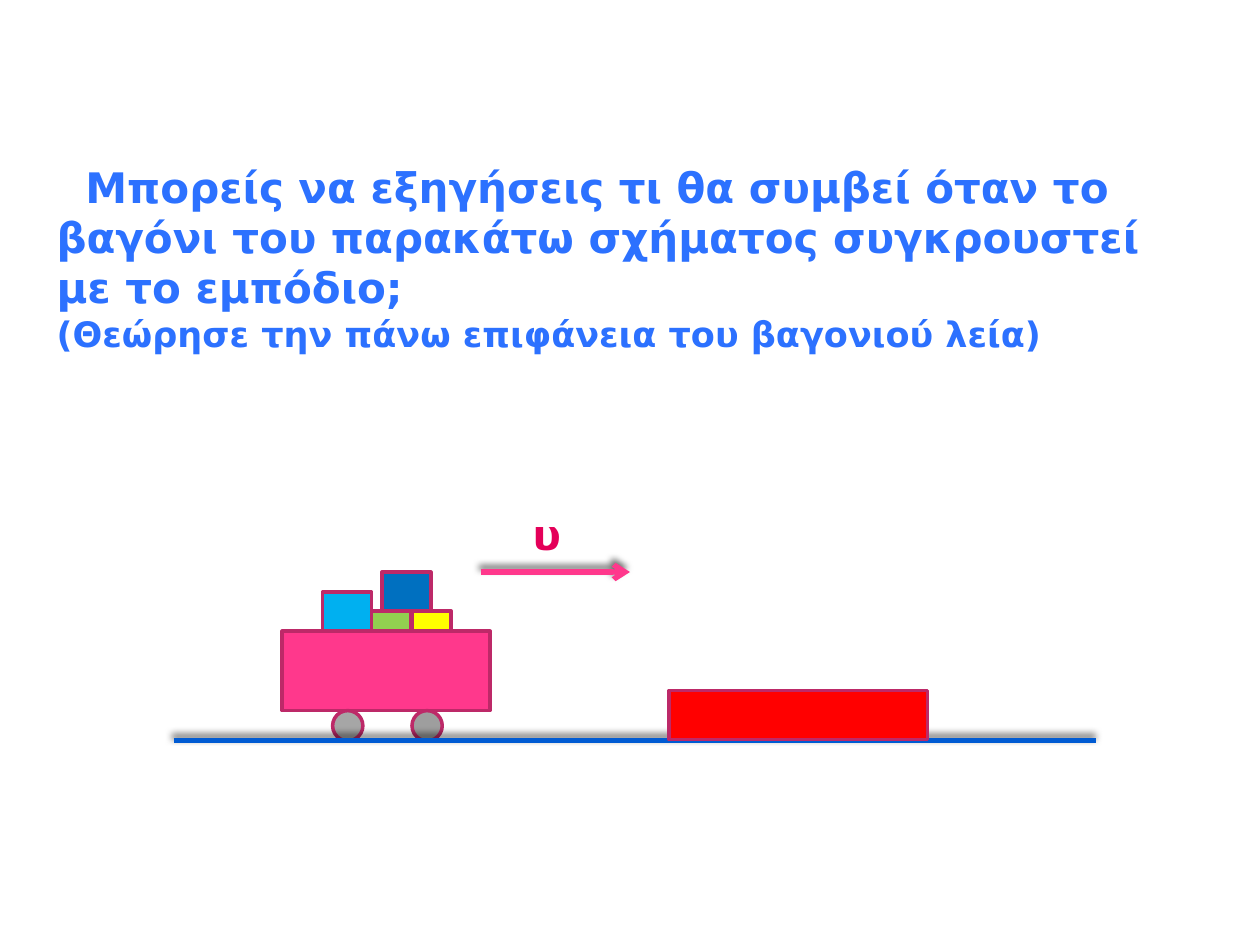
from lxml.etree import SubElement
from pptx import Presentation
from pptx.dml.color import RGBColor
from pptx.enum.shapes import MSO_CONNECTOR as Connector, MSO_SHAPE as Shape
from pptx.enum.text import MSO_AUTO_SIZE as AutoSize
from pptx.oxml.ns import qn
from pptx.util import Inches, Pt

THEME = {
    "font": "DejaVu Sans",
    "outline": "BD2968",
    "outline_width": 2,
    "line_width": 3,
    "ground": "005BD3",
    "velocity": "FF388C",
    "question": {"size": Pt(24), "color": "2C71FF"},
    "hint": {"size": Pt(20), "color": "2C71FF"},
    "symbol": {"size": Pt(24), "color": "E40059"},
    "shadow": {"color": "000000", "alpha": 60, "blur": 4, "distance": 3, "angle": 245},
}

WHEEL = 0.24
CRATE_W, CRATE_H = 0.39, 0.31
SLAB_W, SLAB_H = 0.31, 0.16
GROUND_Y = 5.88
WAGON_TOP = 5.01
SLAB_TOP = WAGON_TOP - SLAB_H

WAGON = [
    (Shape.RECTANGLE, 2.24, WAGON_TOP, 1.65, 0.63, "FF388C"),
    (Shape.OVAL, 2.64, GROUND_Y - WHEEL, WHEEL, WHEEL, "A6A6A6"),
    (Shape.OVAL, 3.27, GROUND_Y - WHEEL, WHEEL, WHEEL, "9E9E9E"),
]
CARGO = [
    (Shape.RECTANGLE, 2.95, SLAB_TOP, SLAB_W, SLAB_H, "92D050"),
    (Shape.RECTANGLE, 3.27, SLAB_TOP, SLAB_W, SLAB_H, "FFFF00"),
    (Shape.RECTANGLE, 2.56, WAGON_TOP - CRATE_H, CRATE_W, CRATE_H, "00B0F0"),
    (Shape.RECTANGLE, 3.03, SLAB_TOP - CRATE_H, CRATE_W, CRATE_H, "0070C0"),
]
OBSTACLE = [(Shape.RECTANGLE, 5.31, 5.48, 2.05, 0.39, "FF0000")]

QUESTION = [
    ("Μπορείς να εξηγήσεις τι θα συμβεί όταν το βαγόνι του παρακάτω σχήματος "
     "συγκρουστεί με το εμπόδιο;", "question", 0.23),
    ("(Θεώρησε την πάνω επιφάνεια του βαγονιού λεία)", "hint", 0),
]
SYMBOL = [("υ", "symbol", 0)]


def rgb(code):
    return RGBColor.from_string(code)


def draw_bodies(slide, bodies):
    for kind, left, top, width, height, fill in bodies:
        body = slide.shapes.add_shape(kind, *map(Inches, (left, top, width, height)))
        body.shadow.inherit = False
        body.fill.solid()
        body.fill.fore_color.rgb = rgb(fill)
        body.line.color.rgb = rgb(THEME["outline"])
        body.line.width = Pt(THEME["outline_width"])


def draw_line(slide, left, right, y, color, arrow=False):
    stroke = slide.shapes.add_connector(
        Connector.STRAIGHT, *map(Inches, (left, y, right, y)))
    stroke.line.color.rgb = rgb(color)
    stroke.line.width = Pt(THEME["line_width"])
    if arrow:
        SubElement(stroke.line._get_or_add_ln(), qn("a:tailEnd"), type="arrow")
    shadow = THEME["shadow"]
    effects = SubElement(stroke._element.spPr, qn("a:effectLst"))
    outer = SubElement(
        effects, qn("a:outerShdw"),
        blurRad=str(Pt(shadow["blur"])), dist=str(Pt(shadow["distance"])),
        dir=str(shadow["angle"] * 60000), rotWithShape="0")
    tint = SubElement(outer, qn("a:srgbClr"), val=shadow["color"])
    SubElement(tint, qn("a:alpha"), val=str(shadow["alpha"] * 1000))


def write_text(slide, place, paragraphs, wrap):
    frame = slide.shapes.add_textbox(*map(Inches, place)).text_frame
    frame.word_wrap = wrap
    frame.auto_size = AutoSize.SHAPE_TO_FIT_TEXT
    for index, (wording, style, indent) in enumerate(paragraphs):
        paragraph = frame.add_paragraph() if index else frame.paragraphs[0]
        if indent:
            paragraph._p.get_or_add_pPr().set("indent", str(Inches(indent)))
        run = paragraph.add_run()
        run.text = wording
        look = {"name": THEME["font"], "bold": True, "size": THEME[style]["size"]}
        for attribute, value in look.items():
            setattr(run.font, attribute, value)
        run.font.color.rgb = rgb(THEME[style]["color"])


def main():
    """Build the slide about a loaded wagon heading for an obstacle."""
    deck = Presentation()
    deck.slide_width, deck.slide_height = Inches(10), Inches(7.5)
    slide = deck.slides.add_slide(deck.slide_layouts[6])
    draw_bodies(slide, WAGON)
    draw_line(slide, 1.38, 8.7, GROUND_Y, THEME["ground"])
    draw_bodies(slide, CARGO)
    draw_line(slide, 3.82, 5, 4.54, THEME["velocity"], arrow=True)
    draw_bodies(slide, OBSTACLE)
    write_text(slide, (0.35, 1.23, 9.21, 1.65), QUESTION, wrap=True)
    write_text(slide, (4.13, 3.99, 0.44, 0.5), SYMBOL, wrap=False)
    deck.save("out.pptx")


if __name__ == "__main__":
    main()
